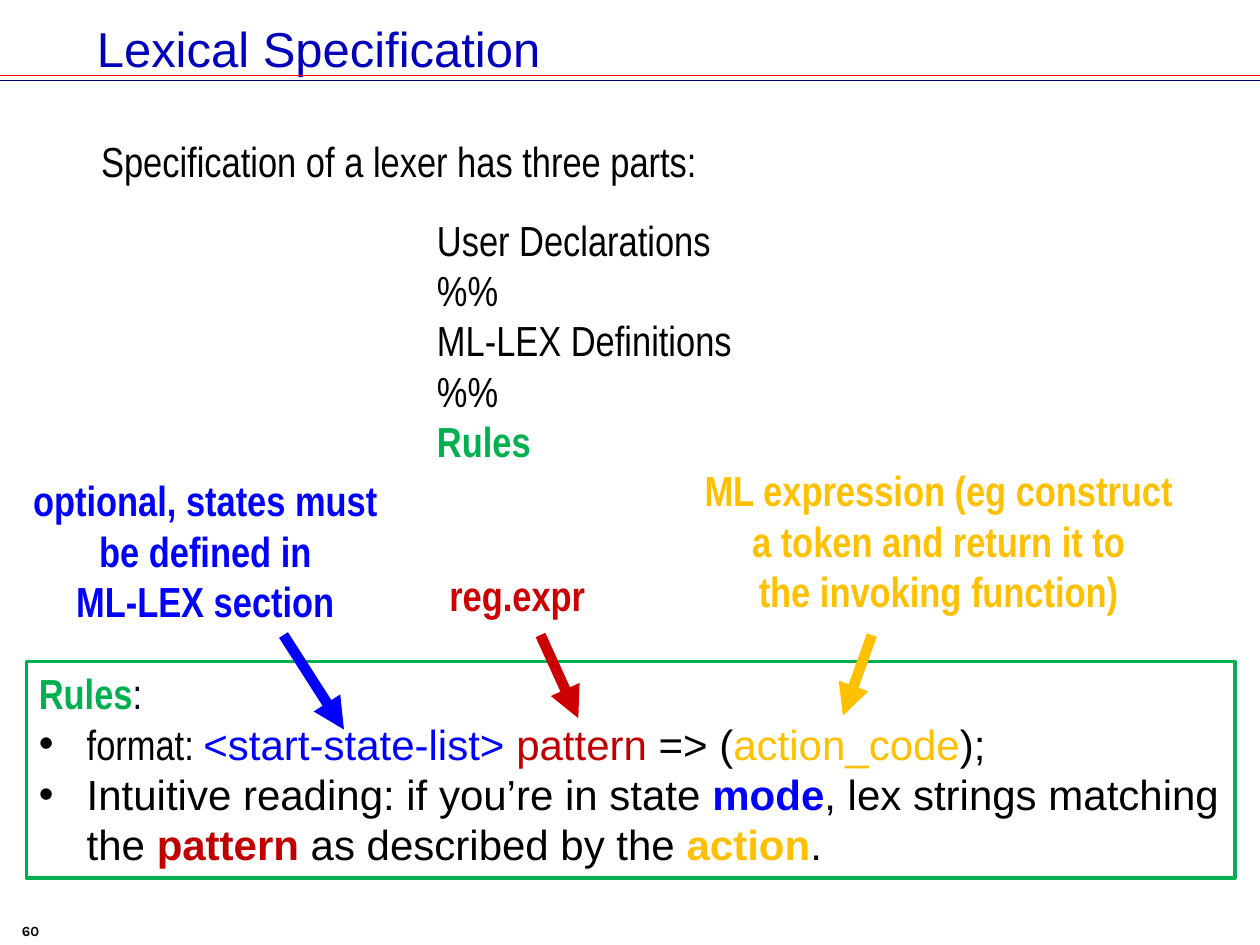
"""Build the slide on the three parts of a lexical specification."""
import pptx
import pptx.chart.data
import pptx.dml.color
import pptx.enum.shapes
import pptx.enum.text
import pptx.oxml
import pptx.util
from pptx.util import Inches

ALIGN = pptx.enum.text.PP_ALIGN
STRAIGHT = pptx.enum.shapes.MSO_CONNECTOR.STRAIGHT
RECTANGLE = pptx.enum.shapes.MSO_SHAPE.RECTANGLE
NAMESPACE = 'xmlns:a="http://schemas.openxmlformats.org/drawingml/2006/main"'
BLACK, BLUE, RED, DARK_RED = "000000", "0000FF", "CC0000", "C00000"
GREEN, GOLD = "00B050", "FFC000"
NARROW = {"name": "Arial Narrow", "size": pptx.util.Pt(24), "bold": False}
NARROW_BOLD = {**NARROW, "bold": True}
PLAIN = {**NARROW, "name": "Arial"}
PLAIN_BOLD = {**PLAIN, "bold": True}
TITLE = {**PLAIN, "size": pptx.util.Pt(28)}
NUMBER = {"name": "Karla", "size": pptx.util.Pt(8), "bold": True}


def rgb(value):
    return pptx.dml.color.RGBColor.from_string(value)


def write(box, paragraphs, align=ALIGN.LEFT, wrap=False):
    frame = box.text_frame
    frame.word_wrap = wrap
    frame.vertical_anchor = pptx.enum.text.MSO_ANCHOR.TOP
    for index, spans in enumerate(paragraphs):
        para = frame.add_paragraph() if index else frame.paragraphs[0]
        para.alignment = align
        for text, color, style in spans:
            for number, line in enumerate(text.split("\n")):
                if number:
                    para.add_line_break()
                span = para.add_run()
                span.text = line
                for name, value in style.items():
                    setattr(span.font, name, value)
                span.font.color.rgb = rgb(color)


deck = pptx.Presentation()
deck.slide_width, deck.slide_height = Inches(10), Inches(7.5)
page = deck.slides.add_slide(deck.slide_layouts[6])

outline = page.shapes.add_shape(
    RECTANGLE, Inches(0.21), Inches(5.25), Inches(9.59), Inches(1.72))
outline.shadow.inherit = False
outline.fill.background()
outline.line.color.rgb = rgb(GREEN)
outline.line.width = pptx.util.Pt(2)
rules = [
    [("Rules", GREEN, NARROW_BOLD), (":", BLACK, NARROW)],
    [("format: ", BLACK, NARROW), ("<start-state-list> ", BLUE, PLAIN),
     ("pattern", DARK_RED, PLAIN), (" => (", BLACK, PLAIN),
     ("action_code", GOLD, PLAIN), (");", BLACK, PLAIN)],
    [("Intuitive reading: if you’re in state ", BLACK, PLAIN),
     ("mode", BLUE, PLAIN_BOLD), (", lex strings matching the ", BLACK, PLAIN),
     ("pattern", DARK_RED, PLAIN_BOLD),
     (" as described by the ", BLACK, PLAIN),
     ("action", GOLD, PLAIN_BOLD), (".", BLACK, PLAIN)],
]
write(outline, rules, wrap=True)
for para in outline.text_frame.paragraphs[1:]:
    properties = para._p.get_or_add_pPr()
    properties.set("marL", str(Inches(0.38)))
    properties.set("indent", str(Inches(-0.38)))
    for bullet in ('buFont {} typeface="Arial"', 'buChar {} char="•"'):
        properties.append(pptx.oxml.parse_xml(f"<a:{bullet.format(NAMESPACE)}/>"))

parts = ["User Declarations", "%%", "ML-LEX Definitions", "%%"]
sections = [[(part, BLACK, NARROW)] for part in parts]
sections.append([("Rules", GREEN, NARROW_BOLD)])
states = "optional, states must\nbe defined in\nML-LEX section"
expression = "ML expression (eg construct\na token and return it to\nthe invoking function)"
boxes = [
    (0, 7.27, 0.41, 0.23, ALIGN.RIGHT, [[("60", BLACK, NUMBER)]]),
    (0.67, 0.1, 8.65, 1, ALIGN.LEFT, [[("Lexical Specification", "0000BA", TITLE)]]),
    (0.67, 1.03, 4.99, 0.5, ALIGN.CENTER,
     [[("Specification of a lexer has three parts:", BLACK, NARROW)]]),
    (3.37, 1.65, 2.57, 2.12, ALIGN.LEFT, sections),
    (0.15, 3.72, 2.96, 1.31, ALIGN.CENTER, [[(states, BLUE, NARROW_BOLD)]]),
    (3.46, 4.47, 1.29, 0.5, ALIGN.CENTER, [[("reg.expr", RED, NARROW_BOLD)]]),
    (5.47, 3.64, 3.96, 1.31, ALIGN.CENTER, [[(expression, GOLD, NARROW_BOLD)]]),
]
for left, top, width, height, align, paragraphs in boxes:
    box = page.shapes.add_textbox(
        Inches(left), Inches(top), Inches(width), Inches(height))
    write(box, paragraphs, align)

lines = [
    (0, 0.6, 10, 0.6, "FF0000", 1, False),
    (0, 0.64, 10, 0.64, "000066", 1, False),
    (2.25, 5.04, 2.73, 5.79, BLUE, 6, True),
    (4.29, 5.04, 4.59, 5.7, RED, 6, True),
    (6.92, 5.04, 6.69, 5.68, GOLD, 6, True),
]
for x1, y1, x2, y2, color, weight, arrow in lines:
    line = page.shapes.add_connector(
        STRAIGHT, Inches(x1), Inches(y1), Inches(x2), Inches(y2))
    line.line.color.rgb = rgb(color)
    line.line.width = pptx.util.Pt(weight)
    if arrow:
        line.line._get_or_add_ln().append(
            pptx.oxml.parse_xml(f'<a:tailEnd {NAMESPACE} type="triangle"/>'))
    line._element.spPr.append(pptx.oxml.parse_xml(f"<a:effectLst {NAMESPACE}/>"))

deck.save("out.pptx")
